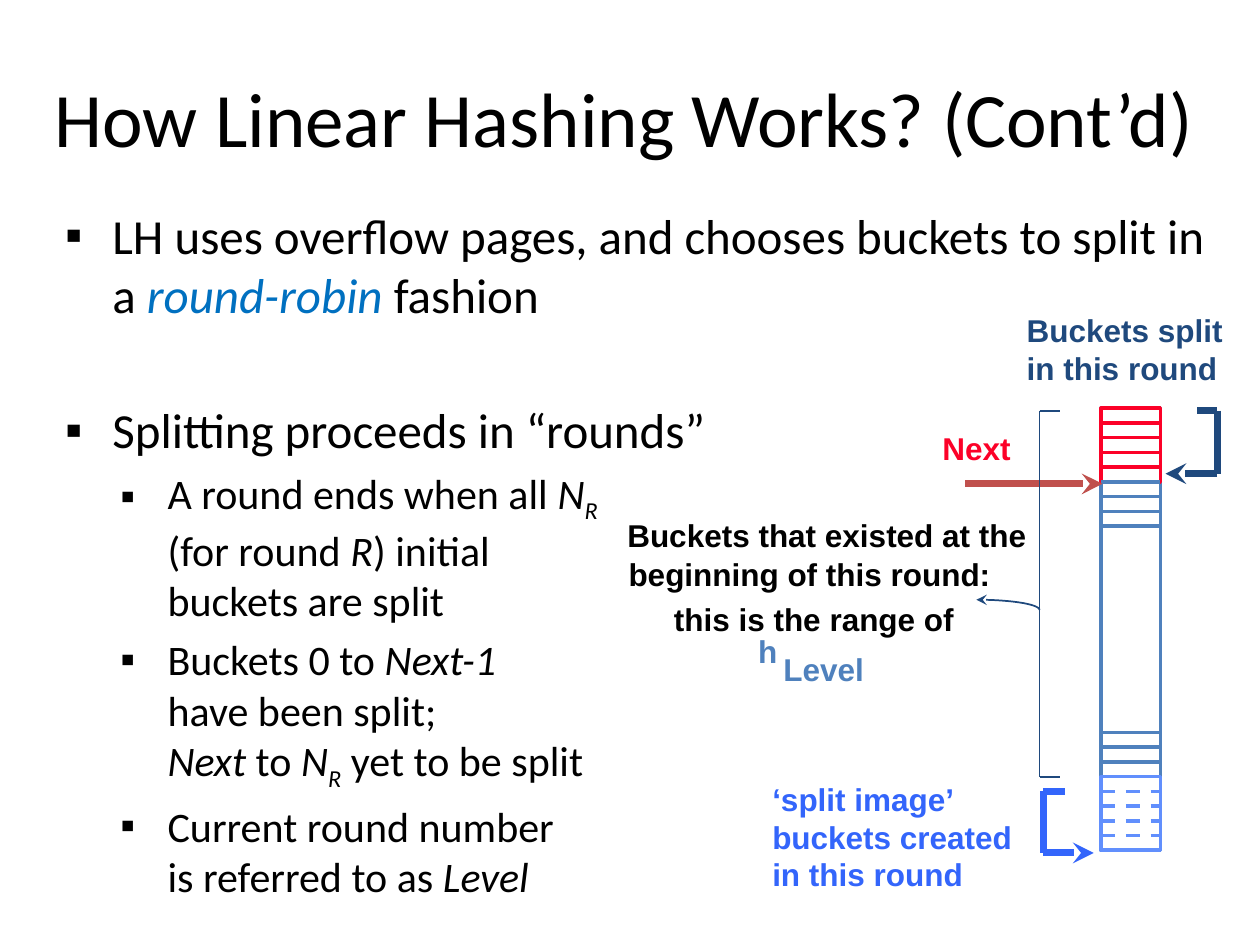
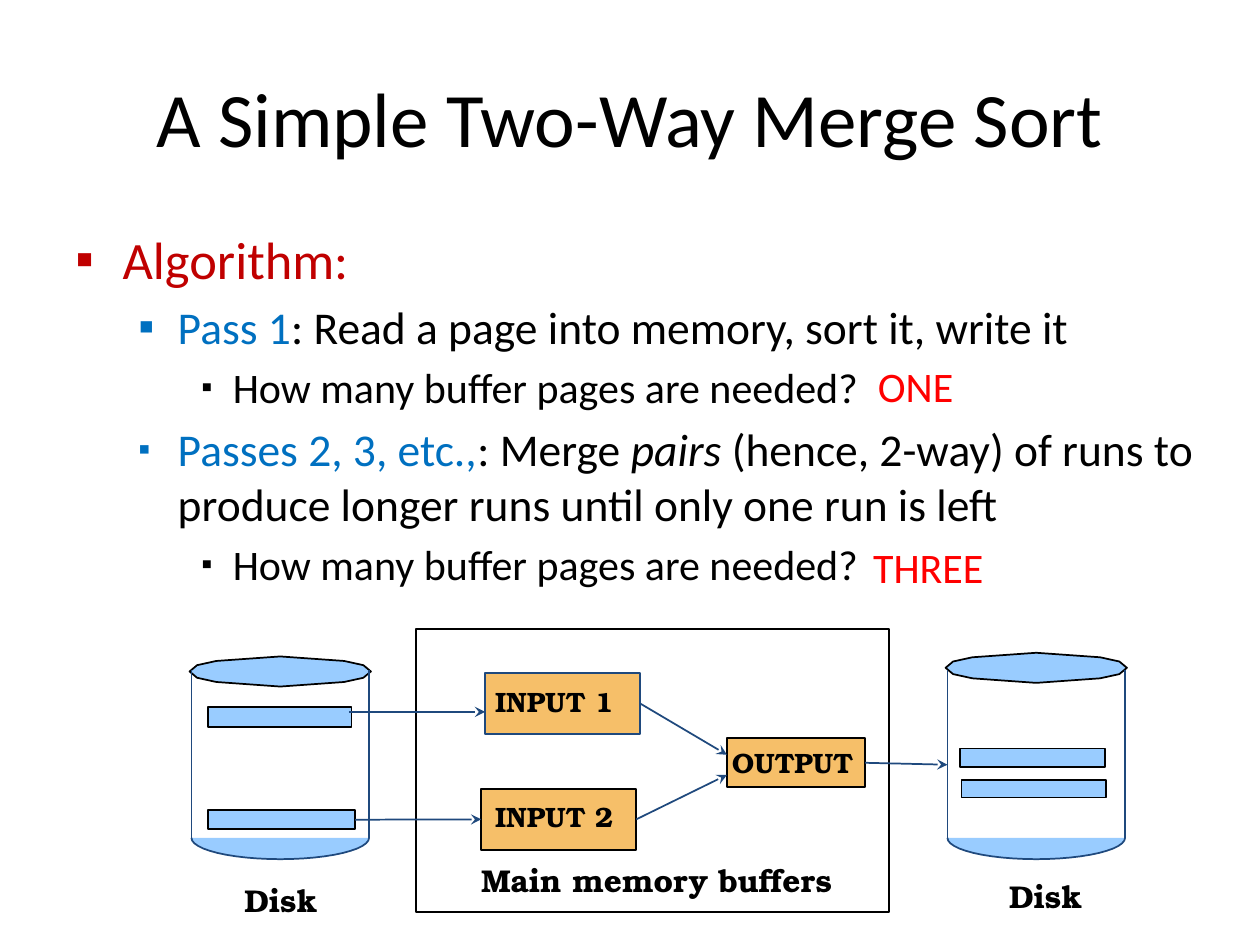
import math
from dataclasses import dataclass

from lxml import etree
from pptx import Presentation
from pptx.dml.color import RGBColor
from pptx.enum import dml, shapes, text
from pptx.oxml.ns import qn
from pptx.util import Pt


@dataclass(frozen=True)
class Theme:
    body_font: str = "Calibri"
    label_font: str = "Arial"
    diagram_font: str = "TeX Gyre Bonum"
    black: str = "000000"
    navy: str = "1F497D"
    steel: str = "4F81BD"
    term: str = "0070C0"
    heading: str = "C00000"
    answer: str = "FF0000"
    split: str = "FC0128"
    next_arrow: str = "C0504D"
    image: str = "618FFD"
    image_label: str = "3365FB"
    page: str = "99CCFF"
    buffer: str = "F6BF69"
    title_size: int = 44
    label_size: int = 18
    buffer_size: int = 16
    answer_size: int = 24


THEME = Theme()
ITALIC = {"italic": True}
SUBSCRIPT = {"italic": True, "baseline": -25000}
TERM = {"color": THEME.term}


def add_run(paragraph, words, size, font, color=THEME.black, bold=False,
            italic=False, baseline=0):
    """Add words in one style; a newline becomes a line break."""
    for i, part in enumerate(words.split("\n")):
        if i:
            paragraph.add_line_break()
        if not part:
            continue
        run = paragraph.add_run()
        run.text = part
        run.font.size = Pt(size)
        run.font.name = font
        run.font.bold = bold
        run.font.italic = italic
        run.font.color.rgb = RGBColor.from_string(color)
        if baseline:
            run._r.get_or_add_rPr().set("baseline", str(baseline))


def add_title(slide, words, left, width):
    title = slide.shapes.title
    title.left, title.top, title.width, title.height = map(Pt, (left, 21.6, width, 90))
    frame = title.text_frame
    frame.vertical_anchor = text.MSO_ANCHOR.MIDDLE
    frame.paragraphs[0].alignment = text.PP_ALIGN.CENTER
    add_run(frame.paragraphs[0], words, THEME.title_size, THEME.body_font)


def set_bullet(paragraph, margin, hanging, percent):
    props = paragraph._p.get_or_add_pPr()
    props.set("marL", str(Pt(margin)))
    props.set("indent", str(-Pt(hanging)))
    for tag, attribute, value in (("a:buSzPct", "val", str(percent * 1000)),
                                  ("a:buFont", "typeface", THEME.label_font),
                                  ("a:buChar", "char", "▪")):
        etree.SubElement(props, qn(tag)).set(attribute, value)


def add_bullets(slide, box, levels, items):
    """items: (level, bullet percent, space before, runs); levels: (size, margin, hanging)."""
    frame = slide.shapes.add_textbox(*map(Pt, box)).text_frame
    frame.word_wrap = True
    for i, (level, percent, before, runs) in enumerate(items):
        size, margin, hanging = levels[level]
        paragraph = frame.add_paragraph() if i else frame.paragraphs[0]
        paragraph.space_before = Pt(before)
        set_bullet(paragraph, margin, hanging, percent)
        for words, style in runs:
            add_run(paragraph, words, size, THEME.body_font, **style)


def add_label(slide, box, lines, size, font, color=THEME.black, bold=True):
    frame = slide.shapes.add_textbox(*map(Pt, box)).text_frame
    frame.word_wrap = False
    frame.auto_size = text.MSO_AUTO_SIZE.SHAPE_TO_FIT_TEXT
    add_run(frame.paragraphs[0], lines, size, font, color, bold)


def paint(shape, line, width, fill=None):
    shape.shadow.inherit = False
    shape.line.color.rgb = RGBColor.from_string(line)
    shape.line.width = Pt(width)
    if fill:
        shape.fill.solid()
        shape.fill.fore_color.rgb = RGBColor.from_string(fill)
    else:
        shape.fill.background()
    return shape


def add_rect(slide, box, line, width=1, fill=None):
    rect = slide.shapes.add_shape(shapes.MSO_SHAPE.RECTANGLE, *map(Pt, box))
    return paint(rect, line, width, fill)


def add_outline(slide, points, line, fill=None, close=False):
    points = [(Pt(x), Pt(y)) for x, y in points]
    builder = slide.shapes.build_freeform(*points[0])
    builder.add_line_segments(points[1:], close=close)
    return paint(builder.convert_to_shape(), line, 1, fill)


def arc_points(x, y, rx, ry, start, end, steps=24):
    angles = [math.radians(start + (end - start) * i / steps) for i in range(steps + 1)]
    return [(x + rx * math.cos(a), y + ry * math.sin(a)) for a in angles]


def add_arrowhead(shape):
    etree.SubElement(shape.line._get_or_add_ln(), qn("a:tailEnd")).set("type", "stealth")


def add_line(slide, start, end, color, width=1, dashed=False, arrow=False):
    line = slide.shapes.add_connector(
        shapes.MSO_CONNECTOR.STRAIGHT, *map(Pt, (*start, *end)))
    line.line.color.rgb = RGBColor.from_string(color)
    line.line.width = Pt(width)
    if dashed:
        line.line.dash_style = dml.MSO_LINE.DASH
    if arrow:
        add_arrowhead(line)
    etree.SubElement(line._element.spPr, qn("a:effectLst"))
    return line


def add_bracket(slide, points, color, width=1, arrow=False):
    for i in range(len(points) - 1):
        add_line(slide, points[i], points[i + 1], color, width,
                 arrow=arrow and i == len(points) - 2)


def add_bucket_file(slide, left, top):
    """Column of 30 bucket rows: split ones, untouched ones, then split images."""
    width, row = 33.8, 8.42

    def block(first, last, color):
        add_rect(slide, (left, top + first * row, width, (last - first) * row), color, 2)

    def rules(rows, color, dashed=False):
        for i in rows:
            y = top + i * row
            add_line(slide, (left, y), (left + width, y), color, 2, dashed)

    block(0, 30, THEME.steel)
    rules(range(22, 26), THEME.steel)
    block(25, 30, THEME.image)
    rules(range(26, 30), THEME.image, dashed=True)
    block(0, 5, THEME.split)
    rules(range(1, 5), THEME.split)
    rules(range(5, 9), THEME.steel)


def add_hashing_figure(slide, left, top):
    def at(*points):
        return [(left + x, top + y) for x, y in points]

    labels = (
        ("Level", 90.6, 195.9, 75.6, 36, THEME.steel),
        ("h", 76.2, 185.8, 35.3, 36, THEME.steel),
        ("Buckets that existed at the", 1.4, 119.6, 242.6, 28.8, THEME.black),
        ("beginning of this round:", 2.1, 141.9, 226, 28.8, THEME.black),
        ("this is the range of", 28, 167.1, 174.2, 28.8, THEME.black),
        ("Next", 181.4, 69.9, 53.3, 28.8, THEME.split),
        ("Buckets split\nin this round", 229.6, 2.2, 132.5, 50.4, THEME.navy),
        ("‘split image’\nbuckets created\nin this round", 84.2, 270.1, 157.7, 72.7,
         THEME.image_label),
    )
    for words, x, y, width, height, color in labels:
        add_label(slide, (left + x, top + y, width, height), words,
                  THEME.label_size, THEME.label_font, color)

    add_bucket_file(slide, left + 279.3, top + 61.3)
    add_bracket(slide, at((334, 62.7), (345.5, 62.7), (345.5, 98.7), (316, 98.7)),
                THEME.navy, 4, arrow=True)
    add_bracket(slide, at((258.4, 280.2), (246.2, 280.2), (246.2, 315.4), (275, 315.4)),
                THEME.image_label, 4, arrow=True)
    add_line(slide, *at((201.5, 104.5), (280, 104.5)), THEME.next_arrow, 4, arrow=True)
    add_bracket(slide, at((255.5, 62.7), (244, 62.7), (244, 272.2), (255.5, 272.2)),
                THEME.navy)
    range_arrow = arc_points(left + 208, top + 176.5, 36, 5.8, 0, -90)
    add_arrowhead(add_outline(slide, range_arrow, THEME.navy))


def add_disk(slide, left, top, lid_y, pages, label_at):
    """Open cylinder with pages inside; returns the page rectangles."""
    width, height = 101.5, 95.8
    middle = left + width / 2
    half_lid = [(-51.8, 0), (-47.5, -3.6), (-36.5, -6), (0, -8.6), (36.5, -6), (47.5, -3.6)]
    lid = half_lid + [(-x, -y) for x, y in half_lid]
    add_outline(slide, [(middle + x, top + lid_y + y) for x, y in lid],
                THEME.black, THEME.page, close=True)
    add_outline(slide, arc_points(middle, top + height, width / 2, 12.2, 180, 0),
                THEME.navy, THEME.page)
    for x in (left, left + width):
        add_line(slide, (x, top), (x, top + height), THEME.navy)
    add_label(slide, (left + label_at[0], top + label_at[1], 56.2, 28.8), "Disk",
              THEME.label_size, THEME.diagram_font)
    return [add_rect(slide, (left + x, top + y, w, h), THEME.black, fill=THEME.page)
            for x, y, w, h in pages]


def add_merge_figure(slide, left, top):
    def buffer(words, box, label_box, line=THEME.black):
        (x, y, w, h), (label_x, label_y, label_w) = box, label_box
        rect = add_rect(slide, (left + x, top + y, w, h), line, fill=THEME.buffer)
        add_label(slide, (left + label_x, top + label_y, label_w, 25.9), words,
                  THEME.buffer_size, THEME.diagram_font)
        return rect

    def arrow(start, end, source=None, target=None):
        (x1, y1), (x2, y2) = start, end
        line = add_line(slide, (left + x1, top + y1), (left + x2, top + y2),
                        THEME.navy, arrow=True)
        if source:
            line.begin_connect(source, 3)
        if target:
            line.end_connect(target, 1)

    add_rect(slide, (left + 129.6, top + 3.3, 270.5, 161.8), THEME.black)
    add_label(slide, (left + 159.8, top + 132.2, 215.3, 28.8), "Main memory buffers",
              THEME.label_size, THEME.diagram_font)
    _, lower_page = add_disk(slide, left + 1.4, top + 27, 0.7,
                             [(9.4, 20.9, 82.1, 11.5), (9.4, 80, 84.2, 10.8)], (23.1, 116.7))
    add_disk(slide, left + 433.4, top + 27, -1.4,
             [(7.2, 44.7, 82.8, 10.8), (8, 62.7, 82.8, 10.1)], (28.1, 114.5))
    input_1 = buffer("INPUT 1", (169.2, 28.5, 88.6, 35), (167.8, 31.4, 82.1), THEME.navy)
    input_2 = buffer("INPUT 2", (167, 94.7, 88.6, 35), (167.8, 97.6, 82.1))
    output = buffer("OUTPUT", (307.4, 65.9, 79, 28), (303.1, 66.6, 83.5))

    arrow((91.4, 50.8), (169.2, 50.8))
    arrow((91.4, 111.3), (169.2, 111.3), lower_page, input_2)
    arrow((259.2, 45), (307.4, 75.3), input_1)
    arrow((259.2, 111.3), (307.4, 86.8), input_2)
    arrow((385.2, 81), (433.4, 81), output)


def build_hashing_slide(slide):
    add_title(slide, "How Linear Hashing Works? (Cont’d)", 5.8, 702)
    levels = [(28, 27, 27), (24, 58.5, 27)]
    add_bullets(slide, (30.2, 113.8, 684, 408.2), levels, [
        (0, 100, 0, [("LH uses overflow pages, and chooses buckets to split in a ", {}),
                     ("round-robin ", {**ITALIC, **TERM}), ("fashion", {})]),
        (0, 100, 44, [("Splitting proceeds in “rounds”", {})]),
        (1, 100, 4.8, [("A round ends when all ", {}), ("N", ITALIC), ("R\n", SUBSCRIPT),
                       ("(for round ", {}), ("R", ITALIC),
                       (") initial\nbuckets are split", {})]),
        (1, 100, 4.8, [("Buckets 0 to ", {}), ("Next-1\n", ITALIC),
                       ("have been split;\n", {}), ("Next", ITALIC), (" to ", {}),
                       ("N", ITALIC), ("R", SUBSCRIPT), (" yet to be split", {})]),
        (1, 100, 4.8, [("Current round number\nis referred to as ", {}), ("Level", ITALIC)]),
    ])
    add_hashing_figure(slide, 350, 172)


def build_merge_slide(slide):
    add_title(slide, "A Simple Two-Way Merge Sort", 36, 648)
    levels = [(30, 27, 27), (26, 58.5, 22.5), (24, 90, 18)]
    question = (2, 75, 4.8, [("How many buffer pages are needed?", {})])
    add_bullets(slide, (36, 126, 671.8, 390.2), levels, [
        (0, 100, 0, [("Algorithm:", {"color": THEME.heading})]),
        (1, 100, 5.2, [("Pass 1", TERM), (": Read a page into memory, sort it, write it", {})]),
        question,
        (1, 75, 5.2, [("Passes 2, 3, etc.,", TERM), (": Merge ", {}), ("pairs", ITALIC),
                      (" (hence, 2-way) of runs to produce longer runs until only one "
                       "run is left", {})]),
        question,
    ])
    add_merge_figure(slide, 108, 356)
    for words, x, y, width in (("ONE", 494.6, 202.3, 58.3), ("THREE", 491.8, 306, 78.5)):
        add_label(slide, (x, y, width, 36), words, THEME.answer_size,
                  THEME.body_font, THEME.answer, bold=False)


def main():
    deck = Presentation()
    deck.slide_width, deck.slide_height = Pt(720), Pt(540)
    for build in (build_hashing_slide, build_merge_slide):
        build(deck.slides.add_slide(deck.slide_layouts[5]))
    deck.save("out.pptx")


if __name__ == "__main__":
    main()
